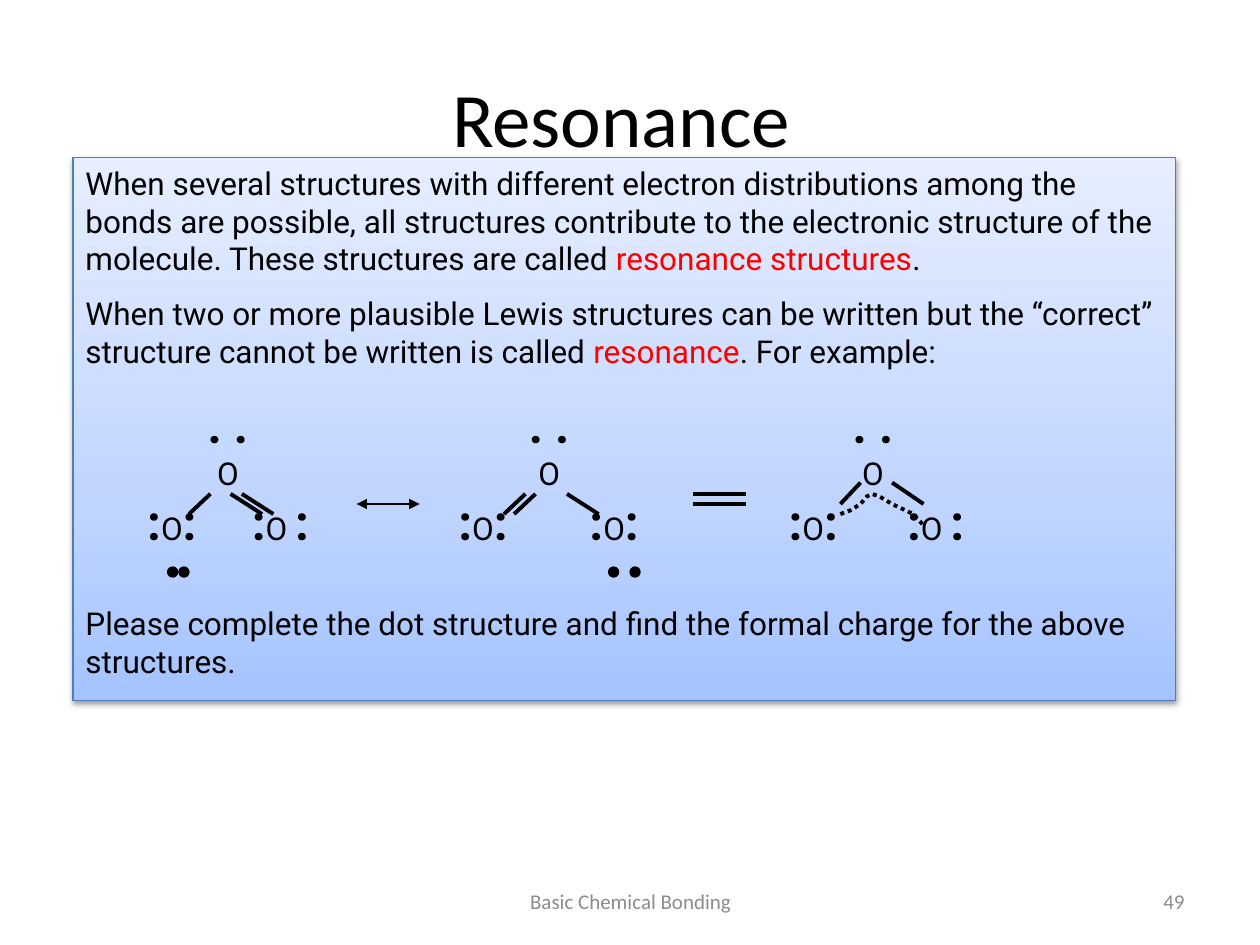
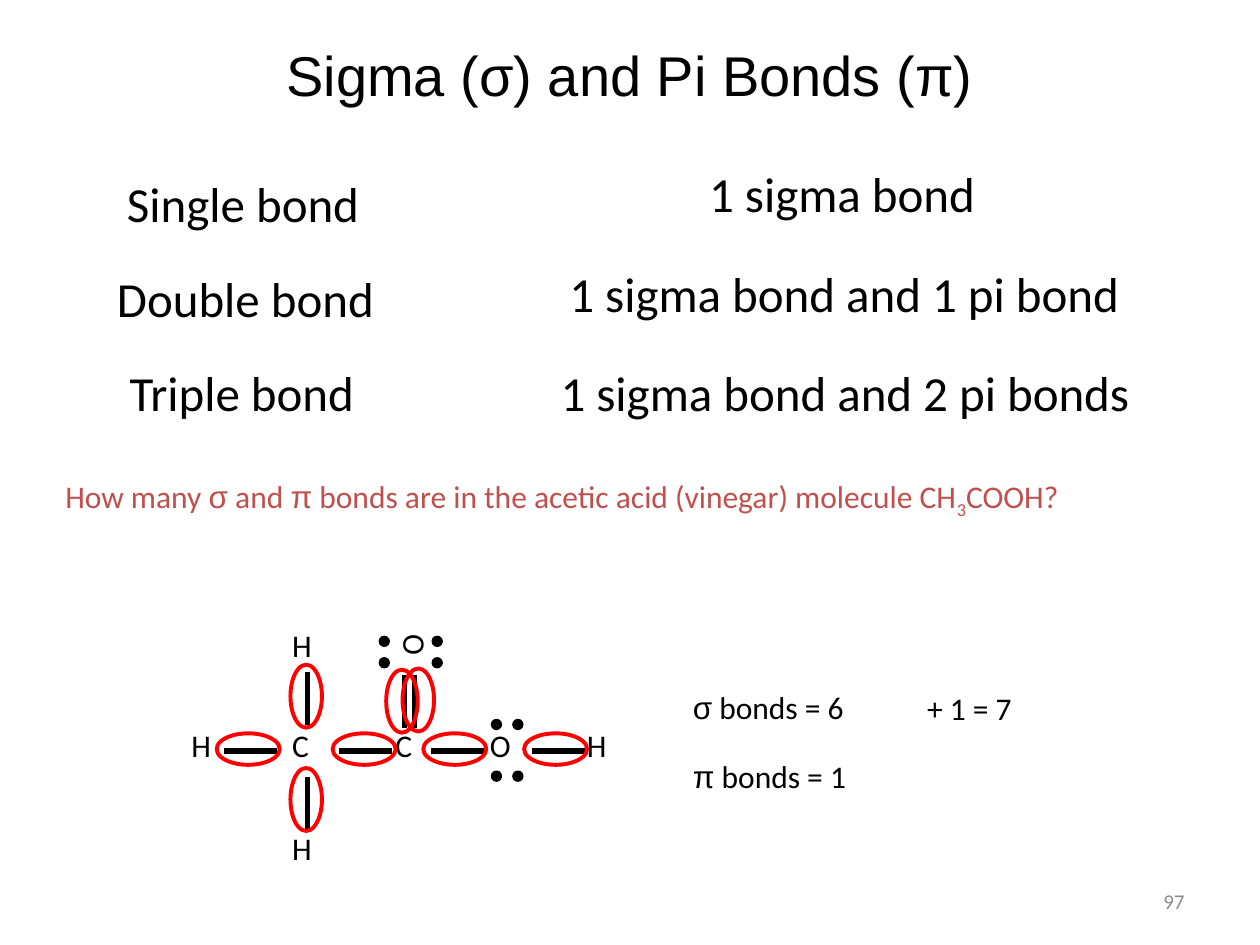
from dataclasses import dataclass
from typing import NamedTuple

from pptx import Presentation
from pptx.dml.color import RGBColor
from pptx.enum.dml import MSO_LINE
from pptx.enum.shapes import MSO_CONNECTOR, MSO_SHAPE
from pptx.enum.text import MSO_ANCHOR, PP_ALIGN
from pptx.oxml.ns import qn
from pptx.oxml.xmlchemy import OxmlElement
from pptx.util import Inches, Pt

LEFT, CENTER, RIGHT = PP_ALIGN.LEFT, PP_ALIGN.CENTER, PP_ALIGN.RIGHT
TOP, MIDDLE = MSO_ANCHOR.TOP, MSO_ANCHOR.MIDDLE
RECT, OVAL = MSO_SHAPE.RECTANGLE, MSO_SHAPE.OVAL
STRAIGHT = MSO_CONNECTOR.STRAIGHT
DOTTED = MSO_LINE.ROUND_DOT


@dataclass(frozen=True)
class Theme:
    ink: str = "000000"
    gray: str = "8C8C8C"
    red: str = "FF0000"
    brick: str = "C0504D"
    edge: str = "4B7EBC"
    fade: tuple = ((0, "A4C4FF"), (35, "BFD4FF"), (100, "E6EEFF"))
    main: str = "Calibri"
    plain: str = "Arial"
    note: str = "Roboto"
    title: int = 44
    head: int = 32
    big: int = 28
    body: int = 18
    small: int = 12
    thin: float = 0.75
    mid: float = 2.25
    thick: float = 3


T = Theme()


class Run(NamedTuple):
    text: str
    size: float = T.body
    font: str = T.main
    color: str = T.ink
    bold: bool = False
    base: int = 0


class Para(NamedTuple):
    runs: list
    align: int = LEFT
    before: float = 0
    tabs: tuple = ()
    stop: str = "l"


class Box(NamedTuple):
    x: float
    y: float
    w: float
    h: float


class Bond(NamedTuple):
    x: float
    y: float
    dx: float
    dy: float


class Label(NamedTuple):
    box: Box
    runs: list


def sized(box: Box) -> list:
    return [Inches(v) for v in box]


def add(parent, tag: str, **attrs):
    node = OxmlElement(tag)
    for key, value in attrs.items():
        node.set(key, str(value))
    parent.append(node)
    return node


def stroke(line, color: str, width: float) -> None:
    line.color.rgb = RGBColor.from_string(color)
    line.width = Pt(width)


def write(frame, paras: list, anchor=TOP) -> None:
    frame.word_wrap = True
    frame.vertical_anchor = anchor
    for i, para in enumerate(paras):
        p = frame.add_paragraph() if i else frame.paragraphs[0]
        p.alignment = para.align
        p.space_before = Pt(para.before)
        if para.tabs:
            stops = add(p._p.get_or_add_pPr(), "a:tabLst")
            for tab in para.tabs:
                add(stops, "a:tab", pos=Inches(tab), algn=para.stop)
        for run in para.runs:
            r = p.add_run()
            r.text = run.text
            r.font.size = Pt(run.size)
            r.font.name = run.font
            r.font.bold = run.bold
            r.font.color.rgb = RGBColor.from_string(run.color)
            if run.base:
                r._r.get_or_add_rPr().set("baseline", str(run.base * 1000))


def put(shapes, box: Box, runs: list, align=LEFT, anchor=TOP, turn: float = 0) -> None:
    shape = shapes.add_textbox(*sized(box))
    shape.rotation = turn
    write(shape.text_frame, [Para(runs, align)], anchor)


def link(shapes, bond: Bond, width: float, arrows: bool = False) -> None:
    x, y, dx, dy = bond
    line = shapes.add_connector(STRAIGHT, *sized((x, y, x + dx, y + dy)))
    stroke(line.line, T.ink, width)
    if arrows:
        ln = line.line._get_or_add_ln()
        for end in ("a:headEnd", "a:tailEnd"):
            add(ln, end, type="triangle")
    add(line._element.spPr, "a:effectLst")


def dot(shapes, x: float, y: float) -> None:
    shape = shapes.add_shape(OVAL, *sized(Box(x, y, 0.08, 0.08)))
    shape.shadow.inherit = False
    shape.fill.solid()
    shape.fill.fore_color.rgb = RGBColor.from_string(T.ink)
    stroke(shape.line, T.ink, T.thin)


def ring(shapes, x: float, y: float, turn: float = 0) -> None:
    shape = shapes.add_shape(OVAL, *sized(Box(x, y, 0.5, 0.25)))
    shape.rotation = turn
    shape.shadow.inherit = False
    shape.fill.background()
    stroke(shape.line, T.red, T.mid)


def start(deck, number: str, title: Run, box: Box, footer: str = ""):
    shapes = deck.slides.add_slide(deck.slide_layouts[6]).shapes
    if footer:
        put(shapes, Box(3.42, 6.95, 3.17, 0.4),
            [Run(footer, T.small, color=T.gray)], CENTER, MIDDLE)
    put(shapes, Box(7.17, 6.95, 2.33, 0.4),
        [Run(number, T.small, color=T.gray)], RIGHT, MIDDLE)
    put(shapes, box, [title], CENTER, MIDDLE)
    return shapes


def note(text: str, color: str = T.ink) -> Run:
    return Run(text, font=T.note, color=color)


def mark(text: str) -> Run:
    return Run(text, T.big, T.note, bold=True)


def panel(shapes) -> None:
    shape = shapes.add_shape(RECT, *sized(Box(0.58, 1.25, 8.75, 4.31)))
    stroke(shape.line, T.edge, T.thin)
    shape.fill.gradient()
    shape.fill.gradient_angle = 90
    props = shape._element.spPr
    stops = props.find(".//" + qn("a:gsLst"))
    for old in list(stops):
        stops.remove(old)
    for pos, color in T.fade:
        add(add(stops, "a:gs", pos=pos * 1000), "a:srgbClr", val=color)
    shape.shadow.inherit = False
    shade = add(props.find(qn("a:effectLst")), "a:outerShdw", blurRad=Pt(3.1),
                dist=Pt(1.6), dir=90 * 60000, rotWithShape=0)
    add(add(shade, "a:srgbClr", val=T.ink), "a:alpha", val=38000)

    mids = (1.13, 3.68, 6.25)
    pairs = []
    for tail in ("O", "O ", "O", "O", "O", "O "):
        pairs += [mark("\t:"), note(tail), mark(":")]
    write(shape.text_frame, [
        Para([note("When several structures with different electron distributions among "
                   "the bonds are possible, all structures contribute to the electronic "
                   "structure of the molecule. These structures are called "),
              note("resonance structures", T.red), note(".")]),
        Para([note("When two or more plausible Lewis structures can be written but the "
                   "“correct” structure cannot be written is called "),
              note("resonance", T.red), note(". For example:")], before=9.5),
        Para([mark("\t. ." * 3)], before=14.5, tabs=mids, stop="ctr"),
        Para([note("\tO" * 3)], tabs=mids, stop="ctr"),
        Para(pairs, tabs=(0.49, 1.32, 2.96, 4, 5.58, 6.52)),
        Para([note("Please complete the dot structure and find the formal charge for "
                   "the above structures.")], before=31),
    ])


def ozone(deck) -> None:
    shapes = start(deck, "49", Run("Resonance ", T.title), Box(0.5, 0.3, 9, 1.25),
                   "Basic Chemical Bonding")
    panel(shapes)
    link(shapes, Bond(2.83, 4, 0.5, 0), T.thin, True)
    falls = [Bond(x, 3.92, 0.25, 0.16) for x in (1.92, 1.83, 4.5)]
    rises = [Bond(x, 3.92, -0.17, 0.16) for x in (1.67, 4.17, 4.25)]
    roof = [Bond(6.83, 3.83, -0.16, 0.17), Bond(7.08, 3.83, 0.25, 0.17)]
    equal = [Bond(5.5, y, 0.42, 0) for y in (4, 3.92)]
    for bond in falls + rises + roof + equal:
        link(shapes, bond, T.mid)

    curve = ((6.67, 4.08), (6.75, 4.05), (6.83, 4), (6.88, 3.94), (6.92, 3.92),
             (6.98, 3.94), (7.08, 4), (7.25, 4.08), (7.33, 4.17))
    points = [(Inches(x), Inches(y)) for x, y in curve]
    path = shapes.build_freeform(*points[0])
    path.add_line_segments(points[1:], close=False)
    cloud = path.convert_to_shape()
    cloud.shadow.inherit = False
    cloud.fill.background()
    stroke(cloud.line, T.ink, T.mid)
    cloud.line.dash_style = DOTTED
    for x in (1.33, 1.42, 4.83, 5):
        dot(shapes, x, 4.5)


def acid(shapes) -> None:
    row = 5.71
    atoms = [("C", 2.22, row), ("H", 2.22, 4.92), ("H", 2.22, 6.53), ("C", 3.04, row),
             ("H", 1.42, row), ("O", 3.79, row), ("H", 4.56, row)]
    for name, x, y in atoms:
        put(shapes, Box(x, y, 0.46, 0.5), [Run(name)])
    put(shapes, Box(3.02, 4.92, 0.46, 0.5), [Run("O")], turn=90)
    flat = [Bond(x, 5.96, 0.42, 0) for x in (1.78, 2.69, 3.42, 4.22)]
    tall = [Bond(x, y, 0, 0.42)
            for x, y in ((2.44, 5.33), (2.44, 6.17), (3.21, 5.36), (3.29, 5.36))]
    for bond in flat + tall:
        link(shapes, bond, T.thick)
    for xs, ys in (((3.01, 3.43), (5.05, 5.22)), ((3.9, 4.07), (5.71, 6.12))):
        for x in xs:
            for y in ys:
                dot(shapes, x, y)


def bonds(deck) -> None:
    shapes = start(deck, "97", Run("Sigma (σ) and Pi Bonds (π)", T.head, T.plain),
                   Box(0.75, 0.17, 8.5, 0.83))
    sigma, pi = Run("σ", font=T.plain), Run("π", font=T.plain)
    kinds = [
        Label(Box(0.91, 1.33, 2.26, 0.57), [Run("Single bond", T.big)]),
        Label(Box(5.53, 1.25, 2.54, 0.57), [Run("1 sigma bond", T.big)]),
        Label(Box(0.83, 2.08, 2.41, 0.57), [Run("Double bond", T.big)]),
        Label(Box(4.42, 2.04, 5.01, 0.57), [Run("1 sigma bond and 1 pi bond", T.big)]),
        Label(Box(0.93, 2.83, 2.15, 0.57), [Run("Triple bond", T.big)]),
        Label(Box(4.35, 2.83, 5.21, 0.57), [Run("1 sigma bond and 2 pi bonds", T.big)]),
    ]
    query = [Run("How many "), sigma, Run(" and "), pi,
             Run(" bonds are in the acetic acid (vinegar) molecule CH"),
             Run("3", base=-25), Run("COOH?")]
    ask = Label(Box(0.42, 3.74, 9.17, 0.9), [r._replace(color=T.brick) for r in query])
    for label in kinds + [ask]:
        put(shapes, label.box, label.runs)

    acid(shapes.add_group_shape().shapes)
    ring(shapes, 2.94, 5.44, 270)
    group = shapes.add_group_shape().shapes
    for x in (1.72, 2.64, 3.36, 4.16):
        ring(group, x, 5.82)
    for y in (5.4, 6.22):
        ring(group, 2.18, y, 270)
    ring(shapes, 3.07, 5.43, 270)

    counts = [
        Label(Box(5.4, 5.41, 1.97, 0.5), [sigma, Run(" bonds = 6")]),
        Label(Box(7.26, 5.42, 1.24, 0.5), [Run("+ 1 = 7")]),
        Label(Box(5.4, 5.96, 1.95, 0.5), [pi, Run(" bonds = 1")]),
    ]
    for label in counts:
        put(shapes, label.box, label.runs)


def main() -> None:
    deck = Presentation()
    deck.slide_width, deck.slide_height = Inches(10), Inches(7.5)
    ozone(deck)
    bonds(deck)
    deck.save("out.pptx")


if __name__ == "__main__":
    main()
